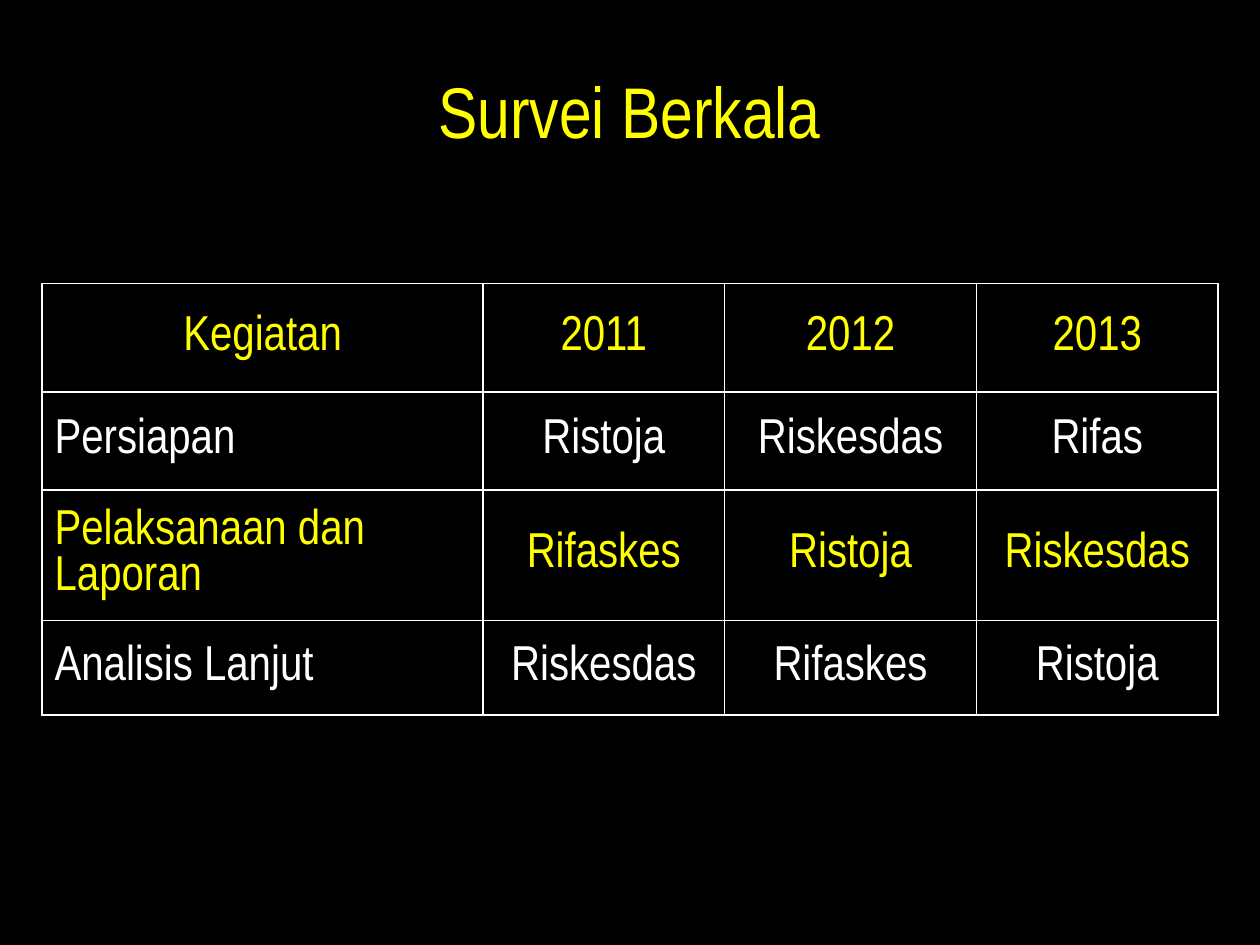
from dataclasses import dataclass

from lxml.etree import SubElement
from pptx import Presentation
from pptx.dml.color import RGBColor
from pptx.enum.text import MSO_ANCHOR, PP_ALIGN
from pptx.oxml.ns import qn
from pptx.util import Pt


@dataclass(frozen=True)
class Theme:
    background: str = "000000"
    accent: str = "FFFF00"
    plain: str = "FFFFFF"
    font: str = "Arial Narrow"
    title_size: int = 41
    table_size: int = 28


theme = Theme()


def write_text(text_frame, text, *, size, color, align=PP_ALIGN.CENTER):
    text_frame.word_wrap = True
    paragraph = text_frame.paragraphs[0]
    paragraph.alignment = align
    run = paragraph.add_run()
    run.text = text
    run.font.name = theme.font
    run.font.size = Pt(size)
    run.font.color.rgb = RGBColor.from_string(color)


def add_cell_borders(cell, color, width):
    properties = cell._tc.get_or_add_tcPr()
    for position, side in enumerate(("lnL", "lnR", "lnT", "lnB")):
        line = SubElement(properties, qn(f"a:{side}"), w=str(Pt(width)))
        fill = SubElement(line, qn("a:solidFill"))
        SubElement(fill, qn("a:srgbClr"), val=color)
        properties.insert(position, line)  # borders come before the cell fill


presentation = Presentation()
presentation.slide_width = Pt(720)
presentation.slide_height = Pt(540)
slide = presentation.slides.add_slide(presentation.slide_layouts[6])
slide.background.fill.solid()
slide.background.fill.fore_color.rgb = RGBColor.from_string(theme.background)

title = slide.shapes.add_textbox(Pt(36), Pt(18), Pt(648), Pt(90))
title.text_frame.vertical_anchor = MSO_ANCHOR.MIDDLE
write_text(title.text_frame, "Survei Berkala", size=theme.title_size, color=theme.accent)

survey_rows = [
    ("Kegiatan", "2011", "2012", "2013"),
    ("Persiapan", "Ristoja", "Riskesdas", "Rifas"),
    ("Pelaksanaan dan Laporan", "Rifaskes", "Ristoja", "Riskesdas"),
    ("Analisis Lanjut", "Riskesdas", "Rifaskes", "Ristoja"),
]
column_widths = [252, 138, 144, 138]
row_heights = [62, 56, 56, 54]

table = slide.shapes.add_table(
    len(row_heights), len(column_widths),
    Pt(24), Pt(162), Pt(sum(column_widths)), Pt(sum(row_heights)),
).table
for column, width in zip(table.columns, column_widths):
    column.width = Pt(width)
for row, height in zip(table.rows, row_heights):
    row.height = Pt(height)

for row_index, row_texts in enumerate(survey_rows):
    color = theme.plain if row_index % 2 else theme.accent
    for column_index, text in enumerate(row_texts):
        cell = table.cell(row_index, column_index)
        cell.fill.background()
        cell.vertical_anchor = MSO_ANCHOR.MIDDLE
        is_activity = row_index > 0 and column_index == 0
        align = PP_ALIGN.LEFT if is_activity else PP_ALIGN.CENTER
        write_text(cell.text_frame, text, size=theme.table_size, color=color, align=align)
        add_cell_borders(cell, theme.plain, 1)

presentation.save("out.pptx")
